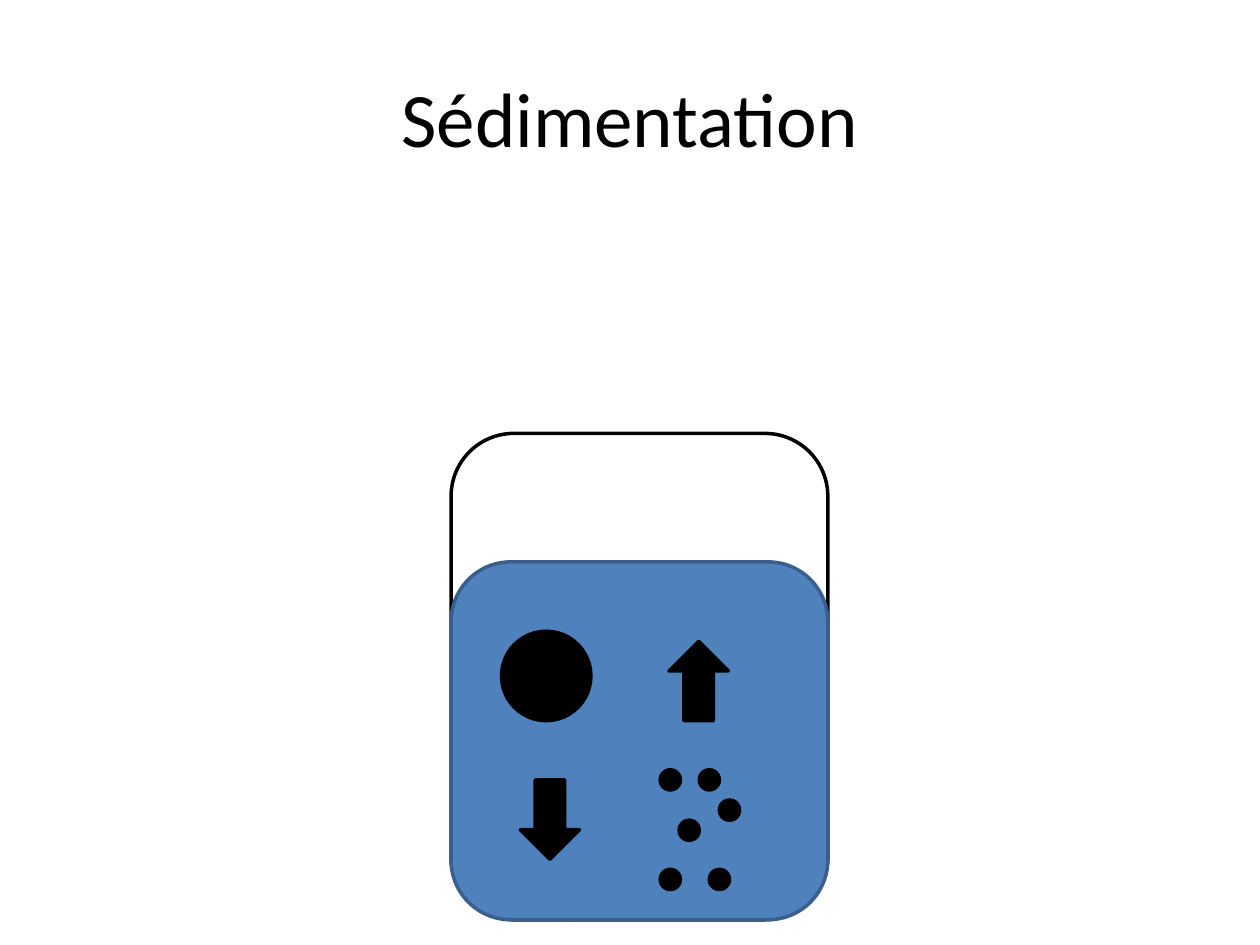
from dataclasses import dataclass

from pptx import Presentation
from pptx.dml.color import RGBColor
from pptx.enum.shapes import MSO_SHAPE
from pptx.enum.text import MSO_ANCHOR, PP_ALIGN
from pptx.util import Inches, Pt


@dataclass(frozen=True)
class Theme:
    """Colours, font and sizes of the slide."""
    ink: str = "000000"
    paper: str = "FFFFFF"
    water: str = "4F81BD"
    edge: str = "3A5F8C"
    font: str = "Calibri"
    title: int = 44
    line: int = 2


THEME = Theme()


def add_title(slide, box, text):
    """Write the centred title in its box."""
    frame = slide.shapes.add_textbox(*map(Inches, box)).text_frame
    frame.word_wrap = True
    frame.vertical_anchor = MSO_ANCHOR.MIDDLE
    para = frame.paragraphs[0]
    para.alignment = PP_ALIGN.CENTER
    run = para.add_run()
    run.text = text
    run.font.name = THEME.font
    run.font.size = Pt(THEME.title)
    run.font.color.rgb = RGBColor.from_string(THEME.ink)


def add_part(slide, kind, box, fill=THEME.ink, edge=THEME.ink):
    """Add one filled and outlined preset shape."""
    part = slide.shapes.add_shape(kind, *map(Inches, box))
    part.shadow.inherit = False
    part.fill.solid()
    part.fill.fore_color.rgb = RGBColor.from_string(fill)
    part.line.color.rgb = RGBColor.from_string(edge)
    part.line.width = Pt(THEME.line)
    return part


def add_beaker(slide, box):
    """Draw the beaker, its water, the grains and their arrows."""
    left, top, width, height = box
    level = 1.02
    add_part(slide, MSO_SHAPE.ROUNDED_RECTANGLE, box, THEME.paper)
    add_part(slide, MSO_SHAPE.ROUNDED_RECTANGLE,
             (left, top + level, width, height - level), THEME.water, THEME.edge)

    grains = [(2.05, 3.46), (2.13, 2.91), (1.81, 3.07),
              (1.66, 3.46), (1.97, 2.67), (1.66, 2.67)]
    for x, y in grains:
        add_part(slide, MSO_SHAPE.OVAL, (left + x, top + y, 0.16, 0.16))

    for x, y, turn in [(0.55, 2.75, 0), (1.73, 1.65, 180)]:
        arrow = add_part(slide, MSO_SHAPE.DOWN_ARROW, (left + x, top + y, 0.47, 0.63))
        arrow.rotation = turn

    add_part(slide, MSO_SHAPE.OVAL, (left + 0.4, top + 1.57, 0.71, 0.71))


def main():
    """Build and save the slide."""
    deck = Presentation()
    deck.slide_width, deck.slide_height = Inches(10), Inches(7.5)
    slide = deck.slides.add_slide(deck.slide_layouts[6])
    add_title(slide, (0.5, 0.3, 9, 1.25), "Sédimentation")
    add_beaker(slide, (3.58, 3.44, 2.99, 3.86))
    deck.save("out.pptx")


if __name__ == "__main__":
    main()
